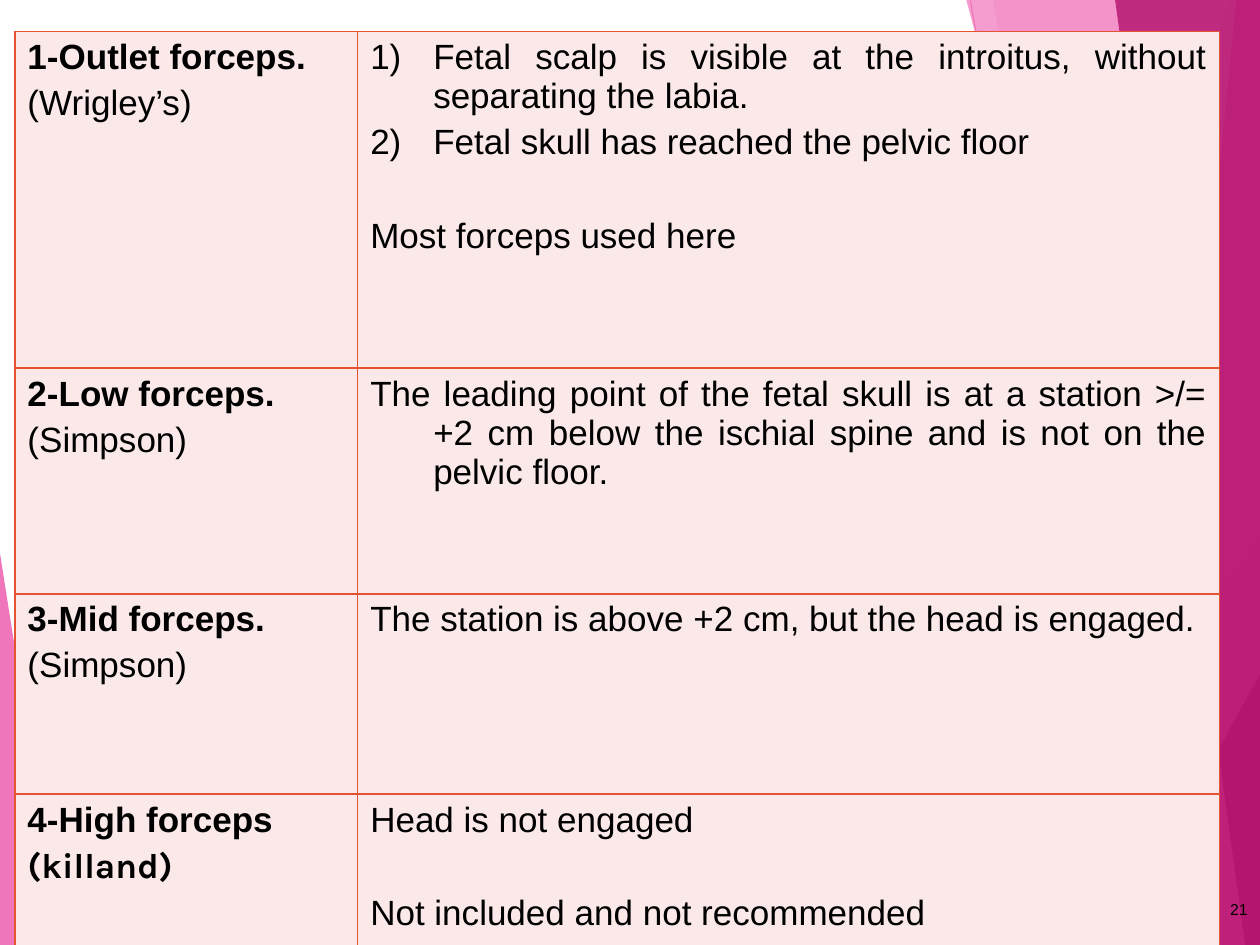
from dataclasses import dataclass

from lxml.etree import SubElement
from pptx import Presentation
from pptx.dml.color import RGBColor
from pptx.enum.shapes import MSO_CONNECTOR
from pptx.enum.text import MSO_ANCHOR, PP_ALIGN
from pptx.oxml.ns import qn
from pptx.util import Cm, Pt

WIDTH, HEIGHT = 25.4, 19.05
HANGING = Cm(1.27)


@dataclass(frozen=True)
class Theme:
    """Colours and type sizes of the deck."""
    light: str = "F496CB"
    pink: str = "EB3D9F"
    deep: str = "B2136D"
    cell: str = "FAE9E8"
    border: str = "E65331"
    ink: str = "000000"
    font: str = "Arial"
    accent_font: str = "Karla"
    body: int = 20
    number: int = 9
    gap: int = 4
    wide_gap: int = 31


def apply(target, values):
    """Set every attribute named in values on target."""
    for name, value in values.items():
        setattr(target, name, value)


def set_alpha(colored, percent):
    """Make the solid colour below an element partly transparent."""
    color = next(colored.iter(qn("a:srgbClr")))
    SubElement(color, qn("a:alpha"), val=str(percent * 1000))


class SlideBuilder:
    """Draws themed elements on one slide."""

    def __init__(self, slide, theme):
        self.shapes, self.theme = slide.shapes, theme

    def facet(self, points, color, alpha):
        """Draw a translucent polygon."""
        start, *rest = [(Cm(x), Cm(y)) for x, y in points]
        builder = self.shapes.build_freeform(*start, scale=1.0)
        builder.add_line_segments(rest, close=True)
        facet = builder.convert_to_shape()
        facet.shadow.inherit = False
        facet.fill.solid()
        facet.fill.fore_color.rgb = RGBColor.from_string(color)
        facet.line.fill.background()
        set_alpha(facet._element.spPr, alpha)

    def ray(self, start, end, color, alpha):
        """Draw a thin translucent line."""
        ray = self.shapes.add_connector(
            MSO_CONNECTOR.STRAIGHT, *(Cm(v) for v in (*start, *end)))
        ray.line.width = Pt(0.75)
        ray.line.color.rgb = RGBColor.from_string(color)
        set_alpha(ray._element.spPr, alpha)
        SubElement(ray._element.spPr, qn("a:effectLst"))

    def fill_paragraph(self, paragraph, text, align=PP_ALIGN.JUSTIFY, gap=None,
                       hanging=False, numbered=False, **font):
        """Fill one paragraph with formatted text."""
        theme = self.theme
        space = theme.gap if gap is None else gap
        apply(paragraph, {"alignment": align, "space_before": Pt(space)})
        properties = paragraph._p.get_or_add_pPr()
        if hanging:
            properties.set("marL", str(HANGING))
            properties.set("indent", str(-HANGING))
        if numbered:
            SubElement(properties, qn("a:buFont"), typeface=theme.font)
            SubElement(properties, qn("a:buAutoNum"), type="arabicParenR")
        run = paragraph.add_run()
        run.text = text
        apply(run.font, {"name": theme.font, "size": Pt(theme.body),
                         "bold": False} | font)
        run.font.color.rgb = RGBColor.from_string(theme.ink)

    def cell(self, cell, entries):
        """Fill and border one table cell and set its text."""
        cell.fill.solid()
        cell.fill.fore_color.rgb = RGBColor.from_string(self.theme.cell)
        properties = cell._tc.get_or_add_tcPr()
        for index, side in enumerate(("lnL", "lnR", "lnT", "lnB")):
            edge = SubElement(properties, qn(f"a:{side}"), w=str(Pt(1)))
            fill = SubElement(edge, qn("a:solidFill"))
            SubElement(fill, qn("a:srgbClr"), val=self.theme.border)
            properties.insert(index, edge)
        frame = cell.text_frame
        for index, (text, style) in enumerate(entries):
            paragraph = frame.add_paragraph() if index else frame.paragraphs[0]
            self.fill_paragraph(paragraph, text, **style)

    def table(self, left, top, widths, heights, rows):
        """Draw a table with the given column widths and row heights."""
        table = self.shapes.add_table(
            len(heights), len(widths), Cm(left), Cm(top),
            Cm(sum(widths)), Cm(sum(heights))).table
        apply(table, {"first_row": False, "horz_banding": False})
        for column, width in zip(table.columns, widths):
            column.width = Cm(width)
        for row, height, contents in zip(table.rows, heights, rows):
            row.height = Cm(height)
            for cell, entries in zip(row.cells, contents):
                self.cell(cell, entries)

    def page_number(self, text, left, top, width, height):
        """Put the slide number in its corner."""
        box = self.shapes.add_textbox(Cm(left), Cm(top), Cm(width), Cm(height))
        apply(box.text_frame, {"word_wrap": True,
                               "vertical_anchor": MSO_ANCHOR.MIDDLE})
        self.fill_paragraph(box.text_frame.paragraphs[0], text, PP_ALIGN.RIGHT,
                            gap=0, size=Pt(self.theme.number))


def right_band(top_x, bottom_x):
    """Return a band from a slanted edge to the right side of the slide."""
    return [(top_x, 0), (bottom_x, HEIGHT), (WIDTH, HEIGHT), (WIDTH, 0)]


def right_corner(left, top):
    """Return a triangle in the lower right corner."""
    return [(left, HEIGHT), (WIDTH, top), (WIDTH, HEIGHT)]


def main():
    """Build the forceps classification slide."""
    theme = Theme()
    deck = Presentation()
    apply(deck, {"slide_width": Cm(WIDTH), "slide_height": Cm(HEIGHT)})
    builder = SlideBuilder(deck.slides.add_slide(deck.slide_layouts[6]), theme)

    builder.ray((14.25, HEIGHT), (WIDTH, 11.61), theme.light, 70)
    builder.ray((19.56, 0), (22.94, HEIGHT), theme.light, 70)
    facets = [
        (right_band(24.77, 19.15), theme.light, 36),
        (right_band(20.02, 23.34), theme.light, 20),
        (right_corner(18.44, 10.9), theme.light, 72),
        (right_band(19.48, 24.64), theme.pink, 50),
        (right_band(24.92, 23.04), theme.pink, 66),
        (right_band(22.48, 25.1), theme.deep, 80),
        (right_corner(22.4, 13.59), theme.deep, 76),
        ([(0, 11.15), (1.24, HEIGHT), (0, HEIGHT)], theme.pink, 70),
    ]
    for facet in facets:
        builder.facet(*facet)

    bold = {"bold": True}
    hanging = {"hanging": True}
    numbered = {"hanging": True, "numbered": True}
    spaced = {"gap": theme.wide_gap}
    classes = [
        ([("1-Outlet forceps.", bold), ("(Wrigley’s)", {})],
         [("Fetal scalp is visible at the introitus, without separating "
           "the labia.", numbered),
          ("Fetal skull has reached the pelvic floor", numbered),
          ("Most forceps used here", hanging | spaced)]),
        ([("2-Low forceps.", bold), ("(Simpson)", {})],
         [("The leading point of the fetal skull is at a station >/= +2 cm "
           "below the ischial spine and is not on the pelvic floor.",
           hanging)]),
        ([("3-Mid forceps.", bold), ("(Simpson)", {})],
         [("The station is above +2 cm, but the head is engaged.", {})]),
        ([("4-High forceps", bold),
          ("(killand)", bold | {"name": theme.accent_font})],
         [("Head is not engaged", {}),
          ("Not included and not recommended", spaced)]),
    ]
    builder.table(0.3, 0.64, (6.91, 17.37), (6.78, 4.55, 4.04, 4.04), classes)
    builder.page_number("21", 23.7, 17.6, 1.7, 1.45)
    deck.save("out.pptx")


if __name__ == "__main__":
    main()
